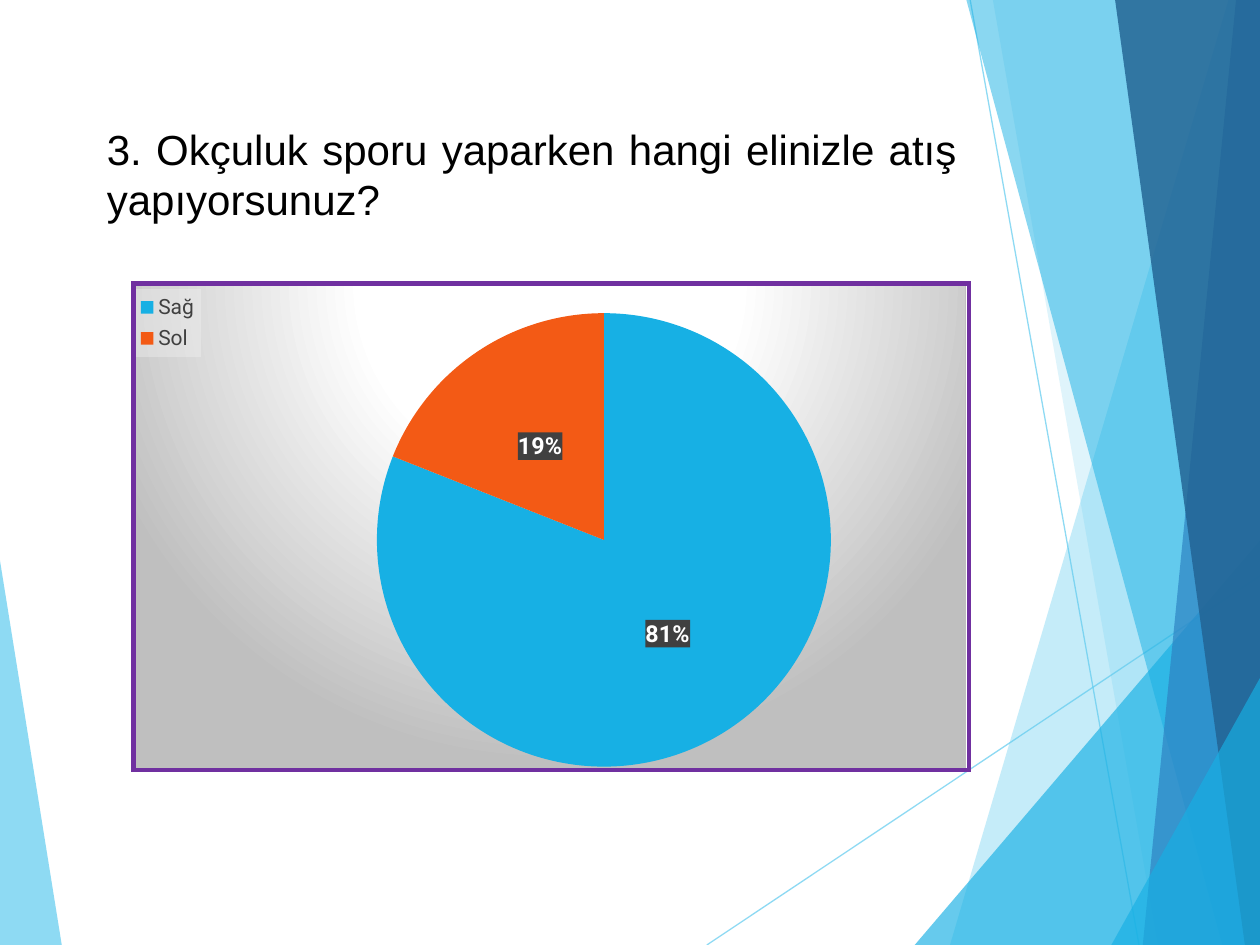
from pptx import Presentation
from pptx.chart.data import CategoryChartData
from pptx.dml.color import RGBColor
from pptx.enum.chart import XL_CHART_TYPE, XL_LABEL_POSITION, XL_LEGEND_POSITION
from pptx.enum.shapes import MSO_CONNECTOR
from pptx.enum.text import MSO_ANCHOR, PP_ALIGN
from pptx.oxml import parse_xml
from pptx.oxml.ns import nsdecls, qn
from pptx.util import Inches, Pt

SKY, BLUE, MID, NAVY = "5FCBEF", "17B0E4", "2E83C3", "226292"
ORANGE, PURPLE = "F35A15", "7030A0"

FACETS = [
    (SKY, 70, [(0, 4.45), (0.49, 7.5), (0, 7.5)]),
    (SKY, 36, [(9.75, 0), (7.54, 7.5), (10, 7.5), (10, 0)]),
    (SKY, 20, [(7.88, 0), (9.19, 7.5), (10, 7.5), (10, 0)]),
    (BLUE, 66, [(7.26, 7.5), (10, 4.29), (10, 7.5)]),
    (BLUE, 50, [(7.67, 0), (9.7, 7.5), (10, 7.5), (10, 0)]),
    (MID, 70, [(9.81, 0), (9.07, 7.5), (10, 7.5), (10, 0)]),
    (NAVY, 82, [(8.85, 0), (9.88, 7.5), (10, 7.5), (10, 0)]),
    (BLUE, 66, [(8.82, 7.5), (10, 5.38), (10, 7.5)]),
]
RAYS = [(5.61, 7.5, 10, 4.57), (7.7, 0, 9.04, 7.5)]


def rgb(code):
    return RGBColor.from_string(code)


def fade(node, alpha):
    for color in node.iter(qn("a:srgbClr")):
        color.append(parse_xml(f'<a:alpha {nsdecls("a")} val="{alpha * 1000}"/>'))


def facet(slide, color, alpha, points):
    path = [(Inches(x), Inches(y)) for x, y in points]
    pen = slide.shapes.build_freeform(*path[0])
    pen.add_line_segments(path[1:], close=True)
    shape = pen.convert_to_shape()
    shape.shadow.inherit = False
    shape.fill.solid()
    shape.fill.fore_color.rgb = rgb(color)
    shape.line.fill.background()
    fade(shape.fill._xPr, alpha)


def ray(slide, ends):
    line = slide.shapes.add_connector(MSO_CONNECTOR.STRAIGHT, *map(Inches, ends))
    line.line.color.rgb = rgb(SKY)
    line.line.width = Pt(0.75)
    props = line._element.spPr
    fade(props, 70)
    props.append(parse_xml(f'<a:effectLst {nsdecls("a")}/>'))


def title(slide, text):
    box = slide.shapes.add_textbox(Inches(0.75), Inches(0.92), Inches(6.94), Inches(0.91))
    frame = box.text_frame
    frame.word_wrap = True
    frame.vertical_anchor = MSO_ANCHOR.BOTTOM
    para = frame.paragraphs[0]
    para.text = text
    para.alignment = PP_ALIGN.JUSTIFY
    style(para.font, 24, "000000", "Arial")


def style(font, size, color, name="Roboto"):
    font.size = Pt(size)
    font.name = name
    font.color.rgb = rgb(color)


def layout(x, y, w, h, inner=False):
    target = '<c:layoutTarget val="inner"/>' if inner else ""
    return parse_xml(
        f'<c:layout {nsdecls("c")}><c:manualLayout>{target}'
        '<c:xMode val="edge"/><c:yMode val="edge"/>'
        f'<c:x val="{x}"/><c:y val="{y}"/><c:w val="{w}"/><c:h val="{h}"/>'
        "</c:manualLayout></c:layout>"
    )


def panel(color, alpha):
    props = parse_xml(
        f'<c:spPr {nsdecls("c", "a")}><a:solidFill><a:srgbClr val="{color}"/>'
        "</a:solidFill><a:ln><a:noFill/></a:ln></c:spPr>"
    )
    fade(props, alpha)
    return props


def glow():
    stops = [(0, "FFFFFF"), (39, "FFFFFF"), (100, "BFBFBF")]
    marks = "".join(
        f'<a:gs pos="{pos * 1000}"><a:srgbClr val="{color}"/></a:gs>' for pos, color in stops
    )
    return parse_xml(
        f'<c:spPr {nsdecls("c", "a")}><a:gradFill><a:gsLst>{marks}</a:gsLst>'
        '<a:path path="circle"><a:fillToRect l="50000" t="-80000" r="50000" b="180000"/>'
        '</a:path></a:gradFill><a:ln w="9525"><a:solidFill><a:srgbClr val="BFBFBF"/>'
        "</a:solidFill></a:ln></c:spPr>"
    )


def pie(slide, cats, values, colors):
    data = CategoryChartData()
    data.categories = cats
    data.add_series("Series 1", values)
    chart = slide.shapes.add_chart(
        XL_CHART_TYPE.PIE, Inches(1.06), Inches(2.25), Inches(6.61), Inches(3.86), data
    ).chart
    chart.has_title = False
    style(chart.font, 10, "000000")
    root = chart._chartSpace
    root.find(qn("c:chart")).addnext(glow())

    area = root.find(".//" + qn("c:plotArea"))
    for old in area.findall(qn("c:layout")):
        area.remove(old)
    area.insert(0, layout(0.21, 0.06, 0.71, 0.935, inner=True))

    plot = chart.plots[0]
    plot.vary_by_categories = True
    for index, color in enumerate(colors):
        fill = plot.series[0].points[index].format.fill
        fill.solid()
        fill.fore_color.rgb = rgb(color)

    labels = plot.series[0].data_labels
    labels.show_value = False
    labels.show_percentage = True
    labels.number_format = "0%"
    labels.number_format_is_linked = False
    labels.position = XL_LABEL_POSITION.CENTER
    style(labels.font, 13.3, "FFFFFF")
    labels.font.bold = True
    labels._element.find(qn("c:numFmt")).addnext(panel("404040", 90))

    chart.has_legend = True
    legend = chart.legend
    legend.position = XL_LEGEND_POSITION.RIGHT
    legend.include_in_layout = False
    style(legend.font, 12, "404040")
    node = legend._element
    for old in node.findall(qn("c:layout")):
        node.remove(old)
    node.find(qn("c:legendPos")).addnext(layout(0, 0.01, 0.08, 0.14))
    node.find(qn("c:overlay")).addnext(panel("F2F2F2", 39))


def frame(slide):
    table = slide.shapes.add_table(
        1, 1, Inches(1.06), Inches(2.25), Inches(6.63), Inches(3.86)
    ).table
    table.first_row = table.horz_banding = False
    cell = table.cell(0, 0)
    cell.fill.background()
    props = cell._tc.get_or_add_tcPr()
    for index, side in enumerate("LRTB"):
        props.insert(index, parse_xml(
            f'<a:ln{side} {nsdecls("a")} w="{Pt(3)}"><a:solidFill>'
            f'<a:srgbClr val="{PURPLE}"/></a:solidFill></a:ln{side}>'
        ))


def main():
    deck = Presentation()
    deck.slide_width, deck.slide_height = Inches(10), Inches(7.5)
    slide = deck.slides.add_slide(deck.slide_layouts[6])
    for ends in RAYS:
        ray(slide, ends)
    for color, alpha, points in FACETS:
        facet(slide, color, alpha, points)
    pie(slide, ["Sağ", "Sol"], [81, 19], [BLUE, ORANGE])
    frame(slide)
    title(slide, "3. Okçuluk sporu yaparken hangi elinizle atış yapıyorsunuz?")
    deck.save("out.pptx")


if __name__ == "__main__":
    main()
